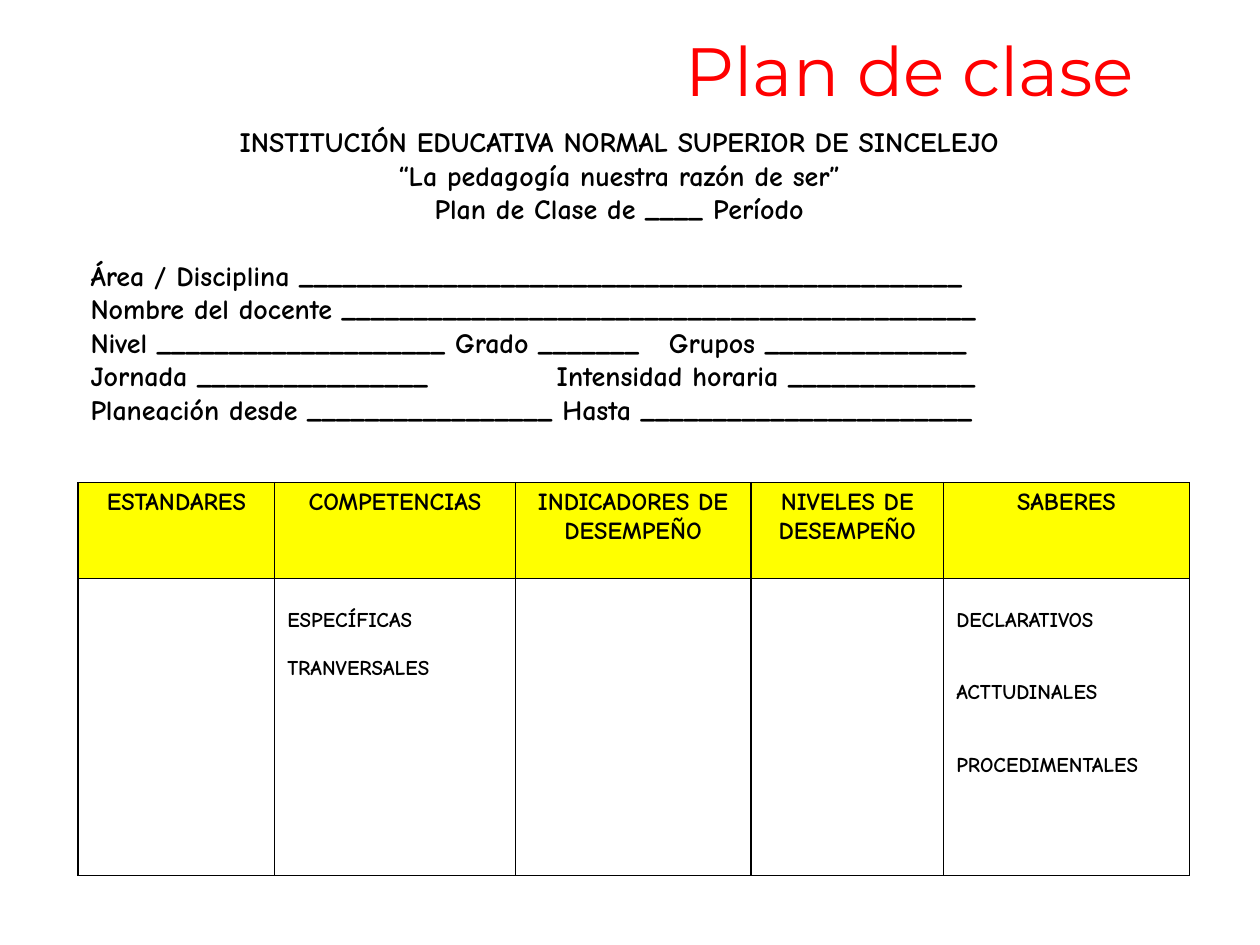
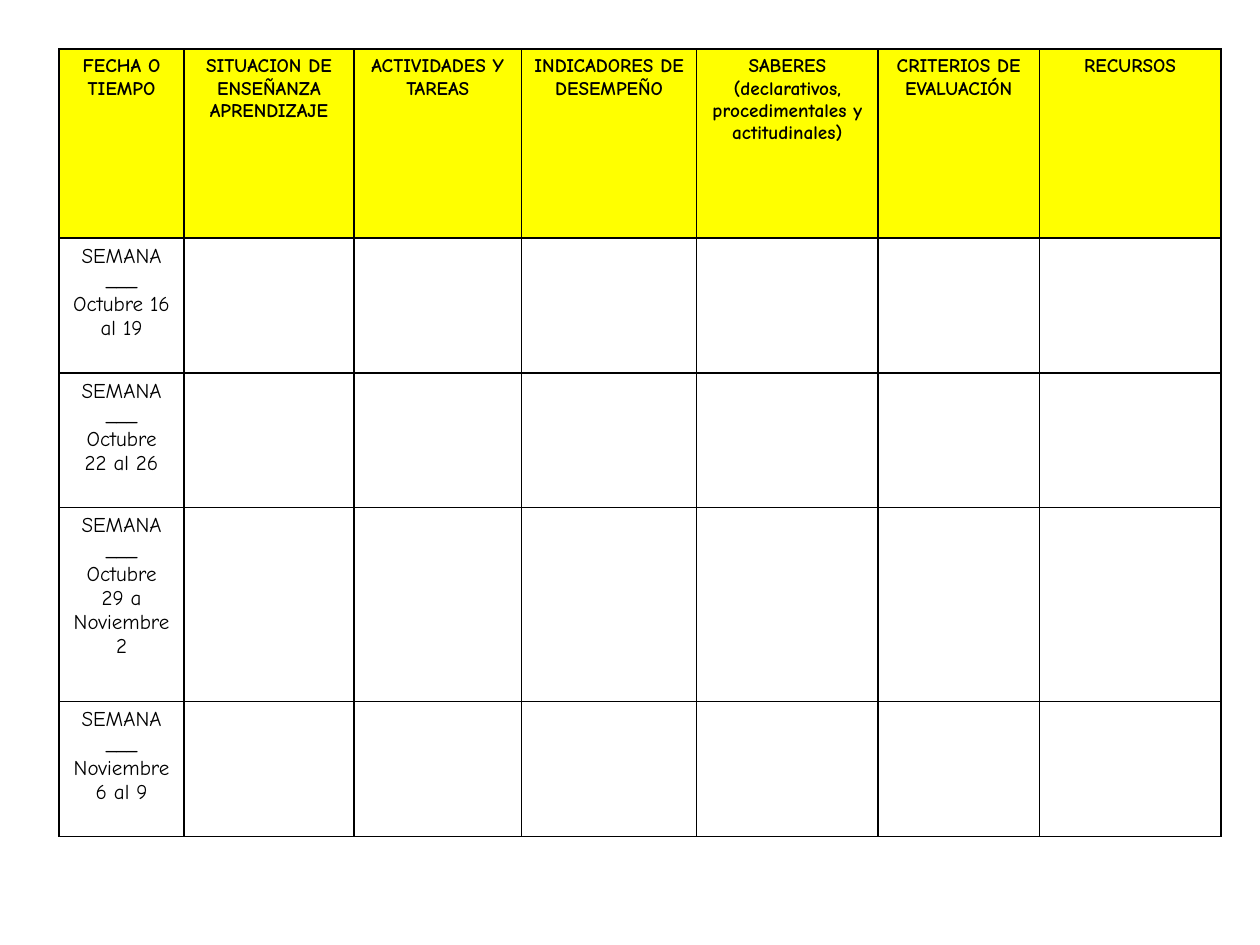
from dataclasses import dataclass

from lxml.etree import SubElement
from pptx import Presentation
from pptx.dml.color import RGBColor
from pptx.enum.text import MSO_ANCHOR, MSO_AUTO_SIZE, PP_ALIGN
from pptx.oxml.ns import qn
from pptx.util import Inches, Pt

BLACK, WHITE, RED, YELLOW = "000000", "FFFFFF", "FF0000", "FFFF00"
BODY_FONT, TITLE_FONT = "Comic Neue", "Montserrat"
FORM_PITCH = 19.15  # line height of the form, in points
LINE_12 = 13.8  # line height of 12 pt text, in points


@dataclass
class Para:
    text: str
    before: float = 0
    tab: float = 0


@dataclass
class Cell:
    paras: list[Para]
    size: float
    bold: bool = True
    align: PP_ALIGN = PP_ALIGN.CENTER
    top: float = 0.05


@dataclass
class Grid:
    left: float
    top: float
    cols: list[float]
    rows: list[float]
    cells: dict[tuple[int, int], Cell]


def color(hex_code: str) -> RGBColor:
    return RGBColor.from_string(hex_code)


def write(p, para: Para, size: float, font=BODY_FONT, fill=BLACK, bold=False,
          align=PP_ALIGN.CENTER, pitch=None) -> None:
    p.text = para.text
    p.alignment = align
    p.space_before = Pt(para.before)
    if pitch:
        p.line_spacing = Pt(pitch)
    if para.tab:
        tabs = SubElement(p._p.get_or_add_pPr(), qn("a:tabLst"))
        SubElement(tabs, qn("a:tab"), pos=str(Inches(para.tab)), algn="l")
    for r in p.runs:
        r.font.name, r.font.size, r.font.bold = font, Pt(size), bold
        r.font.color.rgb = color(fill)


def write_all(tf, paras: list[Para], **fmt) -> None:
    for i, para in enumerate(paras):
        write(tf.add_paragraph() if i else tf.paragraphs[0], para, **fmt)


def add_borders(cell) -> None:
    tc_pr = cell._tc.get_or_add_tcPr()
    for i, side in enumerate(("lnL", "lnR", "lnT", "lnB")):
        ln = tc_pr.makeelement(qn(f"a:{side}"), {"w": str(Pt(1))})
        fill = SubElement(ln, qn("a:solidFill"))
        SubElement(fill, qn("a:srgbClr"), val=BLACK)
        tc_pr.insert(i, ln)


def add_grid(s, grid: Grid) -> None:
    """Draw a bordered table with a yellow header row."""
    shape = s.shapes.add_table(
        len(grid.rows), len(grid.cols), Inches(grid.left), Inches(grid.top),
        Inches(sum(grid.cols)), Inches(sum(grid.rows)))
    table = shape.table
    table.first_row = table.horz_banding = False
    for column, width in zip(table.columns, grid.cols):
        column.width = Inches(width)
    for i, height in enumerate(grid.rows):
        table.rows[i].height = Inches(height)
        for j in range(len(grid.cols)):
            cell = table.cell(i, j)
            cell.fill.solid()
            cell.fill.fore_color.rgb = color(WHITE if i else YELLOW)
            add_borders(cell)
            content = grid.cells.get((i, j))
            if content:
                cell.margin_top = Inches(content.top)
                write_all(cell.text_frame, content.paras, size=content.size,
                          bold=content.bold, align=content.align)


def header_cells(labels: list[str], size: float) -> dict[tuple[int, int], Cell]:
    return {(0, j): Cell([Para(t) for t in label.split("\n")], size)
            for j, label in enumerate(labels)}


def list_cell(items: list[str], gap: float) -> Cell:
    """Left-aligned list that starts one line down, with a gap between items."""
    paras = [Para(t, gap if i else 0) for i, t in enumerate(items)]
    return Cell(paras, 12, align=PP_ALIGN.LEFT, top=0.24)


def add_title(s, text: str) -> None:
    title = s.shapes.title
    title.left, title.top = Inches(5), Inches(0.16)
    title.width, title.height = Inches(4.44), Inches(0.78)
    tf = title.text_frame
    tf.word_wrap = True
    tf.auto_size = MSO_AUTO_SIZE.NONE
    tf.vertical_anchor = MSO_ANCHOR.MIDDLE
    write(tf.paragraphs[0], Para(text), 39, font=TITLE_FONT, fill=RED)


def add_form(s) -> None:
    heading = [
        "INSTITUCIÓN EDUCATIVA NORMAL SUPERIOR DE SINCELEJO",
        "“La pedagogía nuestra razón de ser”",
        "Plan de Clase de ____ Período",
    ]
    fields = [
        Para("Área / Disciplina " + "_" * 46, before=FORM_PITCH),
        Para("Nombre del docente " + "_" * 44),
        Para(f"Nivel {'_' * 20} Grado {'_' * 7}\tGrupos {'_' * 14}", tab=4.59),
        Para(f"Jornada {'_' * 16}\tIntensidad horaria {'_' * 13}", tab=3.7),
        Para(f"Planeación desde {'_' * 17} Hasta {'_' * 23}"),
    ]
    box = s.shapes.add_textbox(Inches(0.62), Inches(0.94), Inches(8.59), Inches(2.52))
    tf = box.text_frame
    tf.word_wrap = True
    lines = [Para(t) for t in heading] + fields
    for i, line in enumerate(lines):
        p = tf.add_paragraph() if i else tf.paragraphs[0]
        align = PP_ALIGN.CENTER if i < len(heading) else PP_ALIGN.JUSTIFY
        write(p, line, 16, bold=True, align=align, pitch=FORM_PITCH)


def build_plan_slide(prs) -> None:
    s = prs.slides.add_slide(prs.slide_layouts[5])
    add_form(s)
    add_title(s, "Plan de clase")
    cells = header_cells(["ESTANDARES", "COMPETENCIAS", "INDICADORES DE DESEMPEÑO",
                          "NIVELES DE DESEMPEÑO", "SABERES"], 14)
    cells[1, 1] = list_cell(["ESPECÍFICAS", "TRANVERSALES"], LINE_12)
    cells[1, 4] = list_cell(["DECLARATIVOS", "ACTTUDINALES", "PROCEDIMENTALES"],
                            2 * LINE_12)
    add_grid(s, Grid(0.62, 3.83, [1.56, 1.91, 1.87, 1.53, 1.95], [0.76, 2.36], cells))


def build_schedule_slide(prs) -> None:
    s = prs.slides.add_slide(prs.slide_layouts[6])
    cells = header_cells([
        "FECHA O TIEMPO", "SITUACION DE ENSEÑANZA APRENDIZAJE",
        "ACTIVIDADES Y TAREAS", "INDICADORES DE DESEMPEÑO",
        "SABERES\n(declarativos, procedimentales y actitudinales)",
        "CRITERIOS DE EVALUACIÓN", "RECURSOS"], 11)
    weeks = ["Octubre 16 al 19", "Octubre\v22 al 26",
             "Octubre\v29 a Noviembre 2", "Noviembre 6 al 9"]
    for i, week in enumerate(weeks, start=1):
        cells[i, 0] = Cell([Para("SEMANA ___"), Para(week)], 12, bold=False)
    add_grid(s, Grid(0.47, 0.39, [0.99, 1.35, 1.33, 1.39, 1.44, 1.28, 1.44],
                     [1.5, 1.07, 1.07, 1.54, 1.07], cells))


def main() -> None:
    prs = Presentation()
    prs.slide_width, prs.slide_height = Inches(10), Inches(7.5)
    build_plan_slide(prs)
    build_schedule_slide(prs)
    prs.save("out.pptx")


if __name__ == "__main__":
    main()
